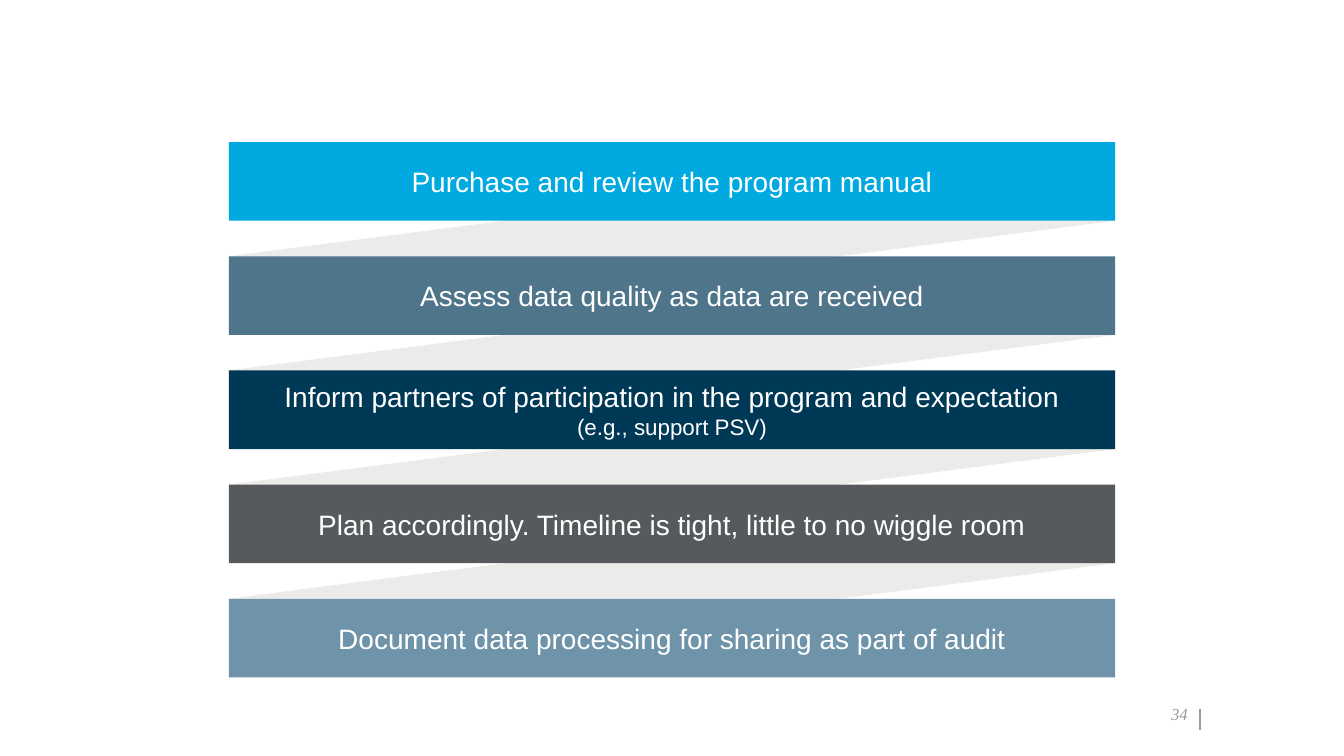
from dataclasses import dataclass

from lxml.etree import SubElement
from pptx import Presentation
from pptx.dml.color import RGBColor
from pptx.enum.shapes import MSO_CONNECTOR, MSO_SHAPE
from pptx.enum.text import MSO_ANCHOR, PP_ALIGN
from pptx.oxml.ns import qn
from pptx.util import Emu, Pt

PX_PER_INCH = 100


@dataclass(frozen=True)
class Theme:
    white: str = "FFFFFF"
    band: str = "CECFCB"
    footer: str = "989D9F"
    body_font: str = "Arial"
    footer_font: str = "Times New Roman"
    body_size: int = 20
    note_size: int = 16
    footer_size: int = 12
    band_alpha: int = 40


THEME = Theme()

# Each step: bar colour, then runs of text with their sizes
STEPS = [
    ("00A9E0", [("Purchase and review the program manual", THEME.body_size)]),
    ("4F758B", [("Assess data quality as data are received", THEME.body_size)]),
    ("003956", [("Inform partners of participation in the program and expectation ",
                 THEME.body_size),
                ("(e.g., support PSV)", THEME.note_size)]),
    ("565A5C", [("Plan accordingly. Timeline is tight, little to no wiggle room",
                 THEME.body_size)]),
    ("6F94AA", [("Document data processing for sharing as part of audit",
                 THEME.body_size)]),
]


def px(n):
    return Emu(round(n * 914400 / PX_PER_INCH))


def rgb(color):
    return RGBColor.from_string(color)


def write(sp, runs, *, color, font, align=PP_ALIGN.CENTER,
          anchor=MSO_ANCHOR.MIDDLE, italic=False, inset=0):
    """Fill a shape with one paragraph made of (text, size) runs."""
    tf = sp.text_frame
    tf.word_wrap = True
    tf.vertical_anchor = anchor
    tf.margin_left = tf.margin_right = px(inset)
    tf.margin_top = tf.margin_bottom = 0
    p = tf.paragraphs[0]
    p.alignment = align
    for text, size in runs:
        r = p.add_run()
        r.text = text
        r.font.size = Pt(size)
        r.font.name = font
        r.font.italic = italic
        r.font.color.rgb = rgb(color)


def paint(sp, color, alpha=None):
    sp.shadow.inherit = False
    sp.line.fill.background()
    sp.fill.solid()
    sp.fill.fore_color.rgb = rgb(color)
    if alpha is not None:
        clr = sp.fill._xPr.find(qn("a:solidFill"))[0]
        SubElement(clr, qn("a:alpha")).set("val", str(alpha * 1000))


def add_band(slide, left, top, width, bar_height, pitch):
    """Slanted band from the bar at top down to the next bar."""
    right = left + width
    corners = [(right, top), (right, top + bar_height),
               (left, top + pitch + bar_height)]
    builder = slide.shapes.build_freeform(px(left), px(top + pitch), scale=1.0)
    builder.add_line_segments([(px(x), px(y)) for x, y in corners], close=True)
    paint(builder.convert_to_shape(), THEME.band, THEME.band_alpha)


def add_bar(slide, left, top, width, height, color, runs):
    sp = slide.shapes.add_shape(MSO_SHAPE.RECTANGLE, px(left), px(top),
                                px(width), px(height))
    paint(sp, color)
    write(sp, runs, color=THEME.white, font=THEME.body_font, inset=48)


def add_steps(slide, left, top, width, height, bar_height=78):
    pitch = (height - bar_height) / (len(STEPS) - 1)
    tops = [top + i * pitch for i in range(len(STEPS))]
    for y in tops[:-1]:
        add_band(slide, left, y, width, bar_height, pitch)
    for y, (color, runs) in zip(tops, STEPS):
        add_bar(slide, left, y, width, bar_height, color, runs)


def add_page_number(slide, left, top, width, height, number):
    """Right-aligned number with a thin rule at the right edge of the box."""
    right = left + width
    rule = slide.shapes.add_connector(MSO_CONNECTOR.STRAIGHT, px(right), px(top),
                                      px(right), px(top + height))
    rule.line.color.rgb = rgb(THEME.footer)
    rule.line.width = Pt(1)
    SubElement(rule._element.spPr, qn("a:effectLst"))
    tb = slide.shapes.add_textbox(px(left), px(top), px(width - 12), px(15))
    write(tb, [(number, THEME.footer_size)], color=THEME.footer,
          font=THEME.footer_font, align=PP_ALIGN.RIGHT,
          anchor=MSO_ANCHOR.BOTTOM, italic=True)


def main():
    prs = Presentation()
    prs.slide_width, prs.slide_height = px(1333), px(750)
    slide = prs.slides.add_slide(prs.slide_layouts[6])
    add_steps(slide, 227, 141, 879, 531)
    add_page_number(slide, 1099, 703, 91, 21, "34")
    prs.save("out.pptx")


if __name__ == "__main__":
    main()
